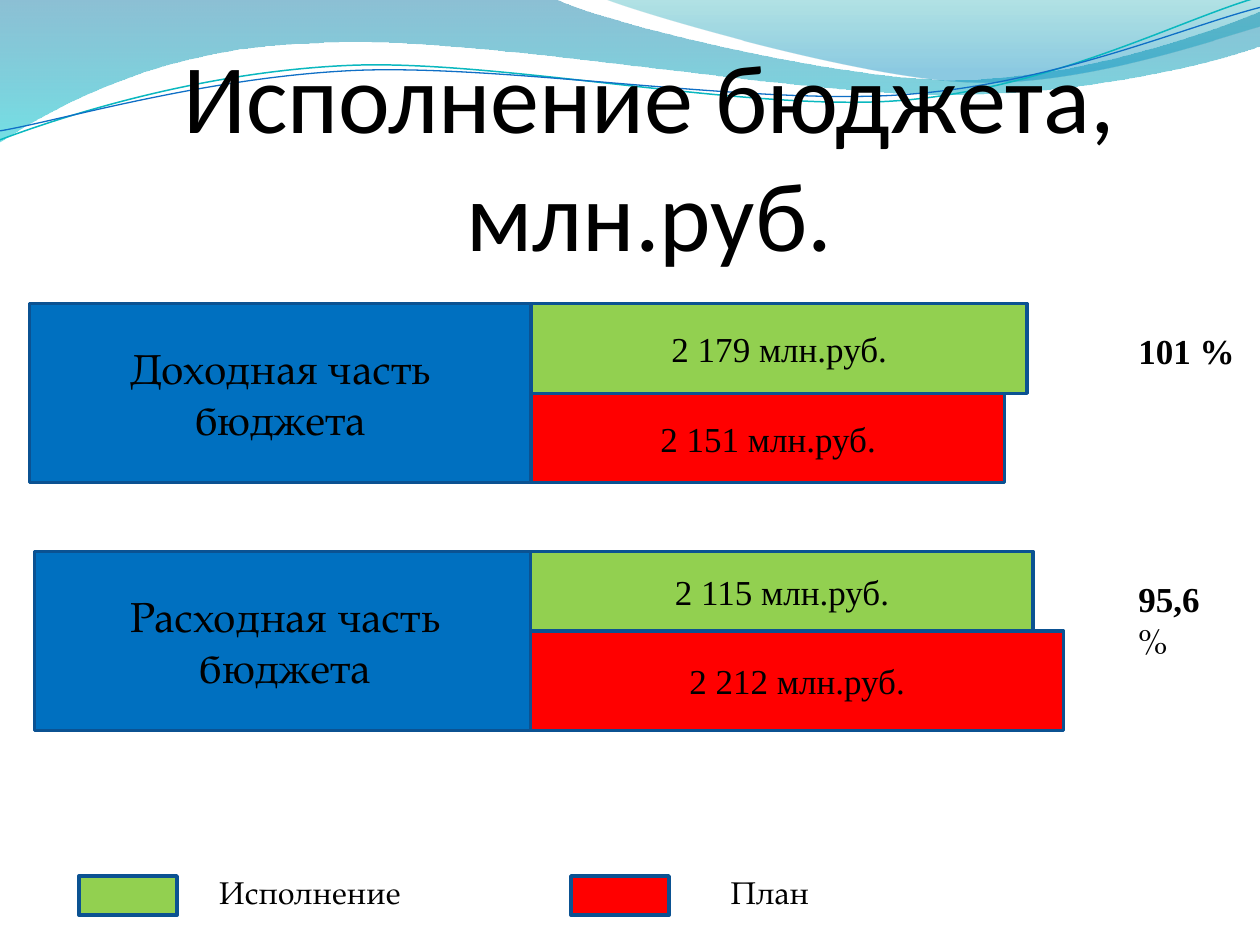
import math

from lxml import etree
from pptx import Presentation
from pptx import util as u
from pptx.dml.color import RGBColor
from pptx.enum import shapes, text
from pptx.oxml import ns

THEME = {
    "label": "0070C0", "done": "92D050", "plan": "FF0000",
    "border": "0B5292", "text": "000000",
    "serif": "Times New Roman", "book": "TeX Gyre Pagella", "heading": "Calibri",
    "title_size": 56, "label_size": 24, "value_size": 20, "legend_size": 18,
    "border_width": 2,
}

TITLE = "Исполнение бюджета, млн.руб."
ROWS = [
    {"label": "Доходная часть бюджета", "left": 0.6, "top": 6.12, "bar_left": 10.72,
     "bars": [("2 151 млн.руб.", "plan", 1.81, 9.53, 1.8),
              ("2 179 млн.руб.", "done", 0, 9.98, 1.81)],
     "percent": [("101 %", "serif", True)], "percent_box": (22.7, 6.51, 2.5, 1.12)},
    {"label": "Расходная часть бюджета", "left": 0.7, "top": 11.12, "bar_left": 10.7,
     "bars": [("2 115 млн.руб.", "done", 0, 10.13, 1.6),
              ("2 212 млн.руб.", "plan", 1.6, 10.74, 2.01)],
     "percent": [("95,6", "serif", True), (" %", "book", False)],
     "percent_box": (22.7, 11.52, 2.44, 1.12)},
]
LEGEND = [("Исполнение", "done", 1.59, 4.17, 4.57), ("План", "plan", 11.51, 14.48, 4.17)]

WAVES = [
    {"box": (-0.03, -0.03, 25.46, 2.9), "start": (0, 0),
     "stops": [(0, "0074A1", 45), (1, "00C6CF", 55)],
     "segments": [(11.18, -0.03), (12.09, 0.43, 16.87, 1.6, 19.25, 1.6),
                  (21.67, 1.6, 24.33, 0.66, 25.4, 0.23), (25.43, 0.91),
                  (24.97, 1.12, 22.1, 1.93, 18.95, 1.9), (15.8, 1.9, 9.7, 0.71, 6.53, 0.86),
                  (3.28, 0.91, 1.17, 2.11, -0.03, 2.87), (0, 0)]},
    {"box": (12.17, -0.03, 13.23, 1.78), "start": (12.17, -0.03),
     "stops": [(0, "00A1A9", 30), (0.8, "008BBF", 45)],
     "segments": [(12.93, 0.28, 17.32, 1.57, 19.53, 1.65),
                  (21.74, 1.75, 24.41, 0.81, 25.4, 0.53), (25.4, 0), (12.17, -0.03)]},
    {"box": (-0.05, 0.56, 25.45, 1.8), "start": (0, 2.82),
     "line": ("0AB8BF", 0.85), "turn": -2.7,
     "segments": [(1.22, 2.36, 4.01, 1.45, 7.04, 1.32), (10.03, 1.19, 15.06, 2.26, 18.11, 2.03),
                  (21.16, 1.8, 23.83, 0.38, 25.35, -0.05)]},
    {"box": (-0.05, 0.76, 25.48, 1.47), "start": (0, 2.64),
     "line": ("0F6FC6", 0.75), "turn": -2.7,
     "segments": [(1.19, 2.44, 4.17, 1.55, 7.19, 1.42), (10.24, 1.3, 15.16, 2.13, 18.21, 1.91),
                  (21.23, 1.7, 23.9, 0.53, 25.4, 0.15)]},
]


def color(value):
    return RGBColor.from_string(value)


def write(shape, runs, size, align, anchor):
    frame = shape.text_frame
    frame.word_wrap = True
    frame.auto_size = text.MSO_AUTO_SIZE.NONE
    frame.vertical_anchor = anchor
    paragraph = frame.paragraphs[0]
    paragraph.alignment = align
    for words, font, bold in runs:
        run = paragraph.add_run()
        run.text = words
        run.font.name = THEME[font]
        run.font.size = u.Pt(THEME[size])
        run.font.bold = bold
        run.font.color.rgb = color(THEME["text"])


def add_box(slide, box, fill, runs=(), size="value_size"):
    shape = slide.shapes.add_shape(shapes.MSO_SHAPE.RECTANGLE, *map(u.Cm, box))
    shape.shadow.inherit = False
    shape.fill.solid()
    shape.fill.fore_color.rgb = color(THEME[fill])
    shape.line.color.rgb = color(THEME["border"])
    shape.line.width = u.Pt(THEME["border_width"])
    if runs:
        write(shape, runs, size, text.PP_ALIGN.CENTER, text.MSO_ANCHOR.MIDDLE)


def add_text(slide, box, runs, size):
    shape = slide.shapes.add_textbox(*map(u.Cm, box))
    write(shape, runs, size, text.PP_ALIGN.LEFT, text.MSO_ANCHOR.TOP)


def to_local(x, y, box, turn):
    left, top, width, height = box
    angle = math.radians(-turn)
    across, down = x - left - width / 2, y - top - height / 2
    return (width / 2 + across * math.cos(angle) - down * math.sin(angle),
            height / 2 + across * math.sin(angle) + down * math.cos(angle))


def draw_curves(shape, wave, turn):
    outline = next(shape.element.iter(ns.qn("a:path")))
    for command in list(outline):
        outline.remove(command)
    commands = [("a:moveTo", wave["start"])]
    commands += [("a:lnTo" if len(segment) == 2 else "a:cubicBezTo", segment)
                 for segment in wave["segments"]]
    for tag, values in commands:
        command = etree.SubElement(outline, ns.qn(tag))
        for x, y in zip(values[::2], values[1::2]):
            local_x, local_y = to_local(x, y, wave["box"], turn)
            etree.SubElement(command, ns.qn("a:pt"),
                             x=str(int(u.Cm(local_x))), y=str(int(u.Cm(local_y))))
    if "stops" in wave:
        etree.SubElement(outline, ns.qn("a:close"))


def add_wave(slide, wave):
    left, top, width, height = wave["box"]
    turn = wave.get("turn", 0)
    builder = slide.shapes.build_freeform(u.Cm(left), u.Cm(top))
    builder.add_line_segments([(u.Cm(left + width), u.Cm(top + height))], close=False)
    shape = builder.convert_to_shape()
    draw_curves(shape, wave, turn)
    shape.rotation = turn
    shape.shadow.inherit = False
    if "line" in wave:
        line_color, line_width = wave["line"]
        shape.fill.background()
        shape.line.color.rgb = color(line_color)
        shape.line.width = u.Pt(line_width)
        return
    shape.line.fill.background()
    shape.fill.gradient()
    shape.fill.gradient_angle = 270
    for stop, (position, value, opacity) in zip(shape.fill.gradient_stops, wave["stops"]):
        stop.position = position
        stop.color.rgb = color(value)
    nodes = shape.element.iter(ns.qn("a:srgbClr"))
    for node, (position, value, opacity) in zip(nodes, wave["stops"]):
        etree.SubElement(node, ns.qn("a:alpha"), val=str(opacity * 1000))


def add_row(slide, row):
    add_box(slide, (row["left"], row["top"], 10.11, 3.61), "label",
            [(row["label"], "book", False)], "label_size")
    for words, kind, offset, width, height in row["bars"]:
        add_box(slide, (row["bar_left"], row["top"] + offset, width, height), kind,
                [(words, "serif", False)])


def add_title(slide):
    title = slide.shapes.title
    title.left, title.top, title.width, title.height = map(u.Cm, (1.59, 0.59, 23.01, 5.05))
    write(title, [(TITLE, "heading", False)], "title_size",
          text.PP_ALIGN.CENTER, text.MSO_ANCHOR.TOP)
    slide.shapes.element.append(title.element)


def main():
    presentation = Presentation()
    presentation.slide_width, presentation.slide_height = u.Cm(25.4), u.Cm(19.05)
    slide = presentation.slides.add_slide(presentation.slide_layouts[5])
    for wave in WAVES:
        add_wave(slide, wave)
    for row in ROWS:
        add_row(slide, row)
    for words, kind, swatch_left, text_left, text_width in LEGEND:
        add_box(slide, (swatch_left, 17.66, 1.98, 0.79), kind)
    for words, kind, swatch_left, text_left, text_width in LEGEND:
        add_text(slide, (text_left, 17.47, text_width, 1.02),
                 [(words, "book", False)], "legend_size")
    add_title(slide)
    for row in ROWS:
        add_text(slide, row["percent_box"], row["percent"], "value_size")
    presentation.save("out.pptx")


if __name__ == "__main__":
    main()
